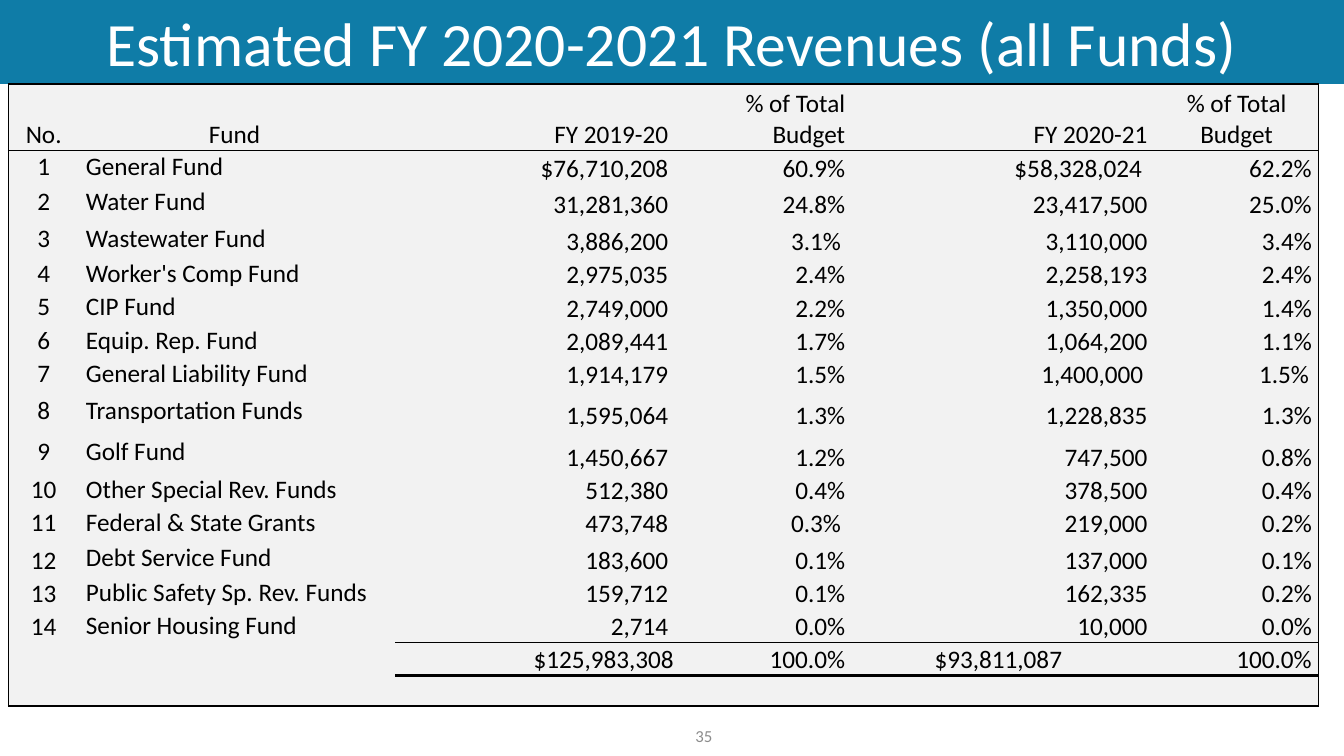
from lxml import etree
from pptx import Presentation
from pptx.dml.color import RGBColor
from pptx.enum.shapes import MSO_SHAPE
from pptx.enum.text import MSO_ANCHOR, PP_ALIGN
from pptx.oxml.ns import qn
from pptx.util import Pt

LEFT, CENTER, RIGHT = PP_ALIGN.LEFT, PP_ALIGN.CENTER, PP_ALIGN.RIGHT
MIDDLE, BOTTOM = MSO_ANCHOR.MIDDLE, MSO_ANCHOR.BOTTOM
RECTANGLE = MSO_SHAPE.RECTANGLE

TITLE = "Estimated FY 2020-2021 Revenues (all Funds)"
PAGE_NUMBER = "35"
HEADINGS = ("No.", "Fund", "FY 2019-20", "% of Total Budget", "FY 2020-21", "% of Total Budget")
FUNDS = [
    ("General Fund", "$76,710,208", "60.9%", "$58,328,024", "62.2%"),
    ("Water Fund", "31,281,360", "24.8%", "23,417,500", "25.0%"),
    ("Wastewater Fund", "3,886,200", "3.1%", "3,110,000", "3.4%"),
    ("Worker's Comp Fund", "2,975,035", "2.4%", "2,258,193", "2.4%"),
    ("CIP Fund", "2,749,000", "2.2%", "1,350,000", "1.4%"),
    ("Equip. Rep. Fund", "2,089,441", "1.7%", "1,064,200", "1.1%"),
    ("General Liability Fund", "1,914,179", "1.5%", "1,400,000", "1.5%"),
    ("Transportation Funds", "1,595,064", "1.3%", "1,228,835", "1.3%"),
    ("Golf Fund", "1,450,667", "1.2%", "747,500", "0.8%"),
    ("Other Special Rev. Funds", "512,380", "0.4%", "378,500", "0.4%"),
    ("Federal & State Grants", "473,748", "0.3%", "219,000", "0.2%"),
    ("Debt Service Fund", "183,600", "0.1%", "137,000", "0.1%"),
    ("Public Safety Sp. Rev. Funds", "159,712", "0.1%", "162,335", "0.2%"),
    ("Senior Housing Fund", "2,714", "0.0%", "10,000", "0.0%"),
]
TOTALS = ("", "", "$125,983,308", "100.0%", "$93,811,087", "100.0%")

FONT = "Calibri"
BLUE, PALE, BLACK, WHITE, GREY = "0F7CA7", "F2F2F2", "000000", "FFFFFF", "8C8C8C"
SLIDE_WIDTH, SLIDE_HEIGHT = 960, 540
BANNER_HEIGHT = 60
TABLE_LEFT, TABLE_WIDTH = 6, 936
COLUMN_WIDTHS = (50.4, 226.1, 203.8, 122.4, 216, 117.3)
ROW_HEIGHT = 23.8
HEADING_HEIGHT, FOOT_HEIGHT = 47.5, 21.6
TALLER_ROWS = {2: 25.9, 3: 26.6, 8: 29.5, 9: 29.5, 12: 25.9}
PADDING, AMOUNT_PADDING = 5, 9
PADDING_EXCEPTIONS = {
    (0, 1): 9, (1, 4): 9, (3, 3): 8, (7, 4): 8,
    (7, 5): 7, (11, 3): 8, (15, 2): 5, (15, 4): 66,
}
ALIGNMENTS = (CENTER, LEFT, RIGHT, RIGHT, RIGHT, RIGHT)
HEADING_ALIGNMENTS = (CENTER, CENTER, RIGHT, RIGHT, RIGHT, CENTER)
NO_GRID_STYLE = "{2D5ABB26-0587-4C30-8999-92F81FD0307C}"

rows = [HEADINGS]
rows += [(str(number), *fund) for number, fund in enumerate(FUNDS, 1)]
rows += [TOTALS, ("",) * len(HEADINGS)]
TOTAL_ROW = len(FUNDS) + 1
LAST_ROW, LAST_COLUMN = len(rows) - 1, len(HEADINGS) - 1
row_heights = [TALLER_ROWS.get(row, ROW_HEIGHT) for row in range(len(rows))]
row_heights[0], row_heights[-1] = HEADING_HEIGHT, FOOT_HEIGHT


def rgb(value):
    return RGBColor.from_string(value)


def apply(target, values):
    for name, value in values.items():
        setattr(target, name, value)


def write(frame, text, size, color, align):
    paragraph = frame.paragraphs[0]
    paragraph.alignment = align
    if text:
        run = paragraph.add_run()
        run.text = text
        apply(run.font, {"name": FONT, "size": Pt(size)})
        run.font.color.rgb = rgb(color)


def rule_below(row, column):
    if row in (-1, 0, LAST_ROW):
        return 1
    if column > 1:
        return {TOTAL_ROW - 1: 1, TOTAL_ROW: 2.25}.get(row, 0)
    return 0


def draw_borders(cell, row, column):
    widths = {
        "a:lnL": int(column == 0),
        "a:lnR": int(column == LAST_COLUMN),
        "a:lnT": rule_below(row - 1, column),
        "a:lnB": rule_below(row, column),
    }
    properties = cell._tc.get_or_add_tcPr()
    for place, (tag, width) in enumerate(widths.items()):
        line = etree.Element(qn(tag), w=str(Pt(width)))
        if width:
            paint = etree.SubElement(line, qn("a:solidFill"))
            etree.SubElement(paint, qn("a:srgbClr"), val=BLACK)
        else:
            etree.SubElement(line, qn("a:noFill"))
        properties.insert(place, line)


def fill_cell(cell, row, column, text):
    padding = AMOUNT_PADDING if column == 2 else PADDING
    centred = 0 < row < TOTAL_ROW and (column == 1 or column == 0 and row < 12)
    apply(cell, {
        "margin_left": Pt(PADDING),
        "margin_right": Pt(PADDING_EXCEPTIONS.get((row, column), padding)),
        "margin_top": 0,
        "margin_bottom": 0,
        "vertical_anchor": MIDDLE if centred else BOTTOM,
    })
    cell.fill.solid()
    cell.fill.fore_color.rgb = rgb(PALE)
    alignments = ALIGNMENTS if row else HEADING_ALIGNMENTS
    write(cell.text_frame, text, 18, BLACK, alignments[column])
    draw_borders(cell, row, column)


def add_banner(slide):
    banner = slide.shapes.add_shape(RECTANGLE, 0, 0, Pt(SLIDE_WIDTH), Pt(BANNER_HEIGHT))
    banner.shadow.inherit = False
    banner.fill.solid()
    banner.fill.fore_color.rgb = rgb(BLUE)
    banner.line.fill.background()
    apply(banner.text_frame, {"word_wrap": True, "vertical_anchor": MIDDLE})
    write(banner.text_frame, TITLE, 44, WHITE, CENTER)


def add_revenues(slide):
    table = slide.shapes.add_table(
        len(rows), len(HEADINGS), Pt(TABLE_LEFT), Pt(BANNER_HEIGHT),
        Pt(TABLE_WIDTH), Pt(sum(row_heights))).table
    apply(table, {"first_row": False, "horz_banding": False})
    table._tbl.tblPr.find(qn("a:tableStyleId")).text = NO_GRID_STYLE
    for column, width in zip(table.columns, COLUMN_WIDTHS):
        column.width = Pt(width)
    for row, texts in enumerate(rows):
        table.rows[row].height = Pt(row_heights[row])
        for column, text in enumerate(texts):
            fill_cell(table.cell(row, column), row, column, text)


def add_page_number(slide):
    frame = slide.shapes.add_textbox(Pt(444), Pt(511), Pt(72), Pt(29)).text_frame
    apply(frame, {"word_wrap": True, "vertical_anchor": MIDDLE})
    write(frame, PAGE_NUMBER, 12, GREY, RIGHT)


def main():
    deck = Presentation()
    apply(deck, {"slide_width": Pt(SLIDE_WIDTH), "slide_height": Pt(SLIDE_HEIGHT)})
    slide = deck.slides.add_slide(deck.slide_layouts[6])
    add_banner(slide)
    add_page_number(slide)
    add_revenues(slide)
    deck.save("out.pptx")


if __name__ == "__main__":
    main()
